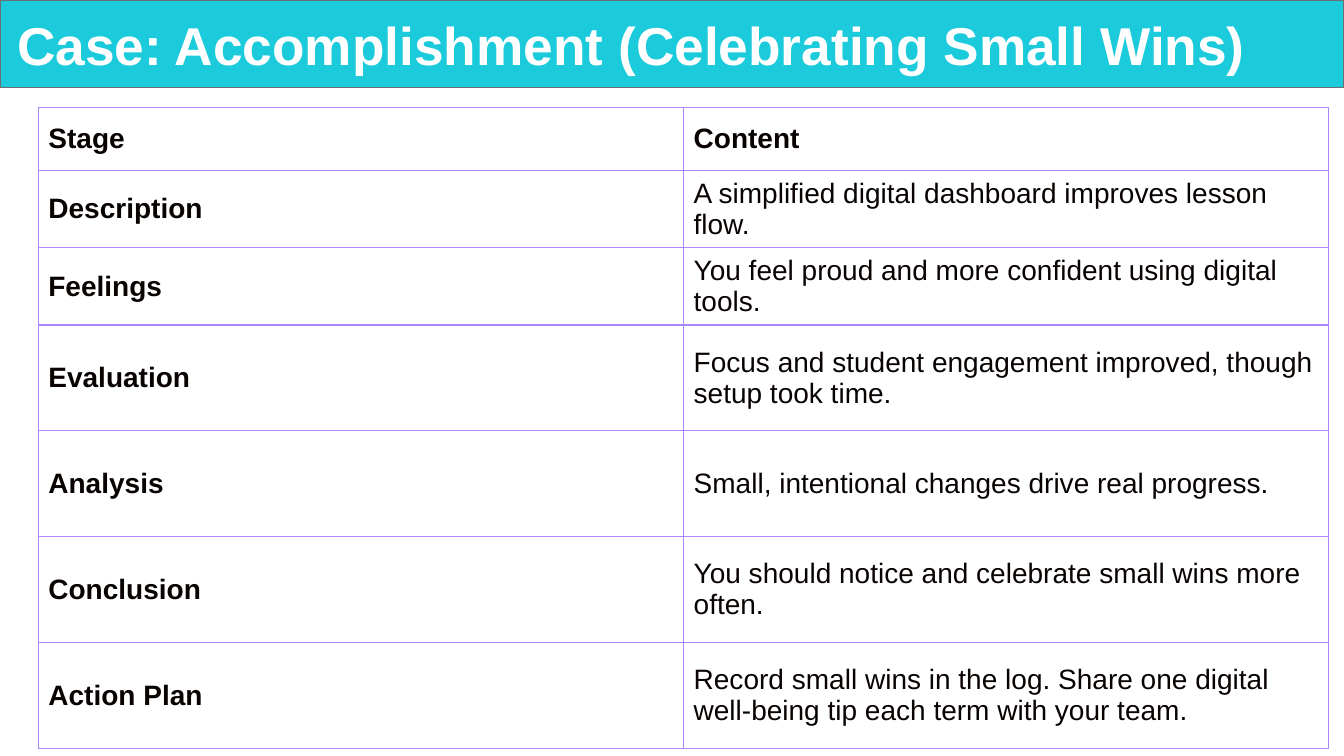
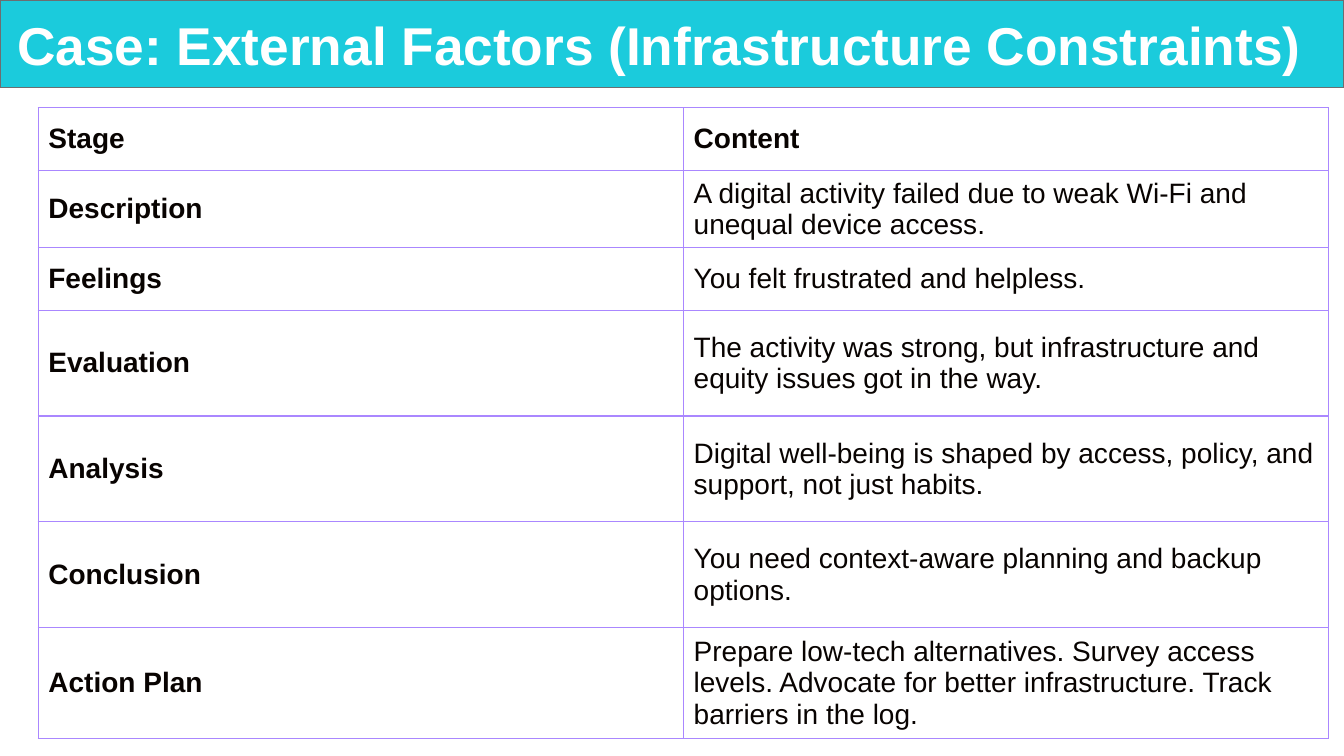
from lxml.etree import SubElement as Sub
from pptx import Presentation
from pptx.dml.color import RGBColor as Rgb
from pptx.enum.shapes import MSO_SHAPE as Shape
from pptx.enum.text import MSO_ANCHOR as Anchor
from pptx.oxml.ns import qn
from pptx.util import Inches, Pt

HUES = {"page": "FFFFFF", "band": "1BCBDC", "edge": "6C6E70",
        "title": "FFFFFF", "text": "080301", "grid": "AA87FF"}
FONT = "Arial"

# Text formats
HEAD = {"name": FONT, "size": Pt(38), "bold": True}
BOLD = {"name": FONT, "size": Pt(20), "bold": True}
BODY = {**BOLD, "bold": False}

# Boxes: left, top, width, height
WIDE, HIGH = 13.33, 7.5
BAND = (0, 0, WIDE, 0.87)
TITLE = (0.11, 0.09, 13.06, 0.78)
GRID = (0.38, 1.07, 12.8, 6.06)
ROWS = [0.62] * 3 + [1.05] * 4

STAGES = ["Description", "Feelings", "Evaluation", "Analysis",
          "Conclusion", "Action Plan"]
CASES = [
    ("Case: Accomplishment (Celebrating Small Wins)", [
        "A simplified digital dashboard improves lesson flow.",
        "You feel proud and more confident using digital tools.",
        "Focus and student engagement improved, though setup took time.",
        "Small, intentional changes drive real progress.",
        "You should notice and celebrate small wins more often.",
        "Record small wins in the log. Share one digital well-being tip "
        "each term with your team.",
    ]),
    ("Case: External Factors (Infrastructure Constraints)", [
        "A digital activity failed due to weak Wi-Fi and unequal device access.",
        "You felt frustrated and helpless.",
        "The activity was strong, but infrastructure and equity issues "
        "got in the way.",
        "Digital well-being is shaped by access, policy, and support, "
        "not just habits.",
        "You need context-aware planning and backup options.",
        "Prepare low-tech alternatives. Survey access levels. Advocate for "
        "better infrastructure. Track barriers in the log.",
    ]),
]


def hue(key):
    return Rgb.from_string(HUES[key])


def paint(fill, key):
    fill.solid()
    fill.fore_color.rgb = hue(key)


def put(frame, text, form, key):
    """Write one run of text with the given format."""
    para = frame.paragraphs[0]
    run = para.add_run()
    run.text = text
    for name, value in form.items():
        setattr(run.font, name, value)
    run.font.color.rgb = hue(key)
    return para


def rule(cell):
    """Draw the four borders of a cell."""
    props = cell._tc.get_or_add_tcPr()
    for side in ("a:lnL", "a:lnR", "a:lnT", "a:lnB"):
        line = Sub(props, qn(side), w=str(Pt(1)))
        Sub(Sub(line, qn("a:solidFill")), qn("a:srgbClr"), val=HUES["grid"])


def add_band(slide, box):
    band = slide.shapes.add_shape(Shape.RECTANGLE, *map(Inches, box))
    band.shadow.inherit = False
    paint(band.fill, "band")
    band.line.color.rgb = hue("edge")
    band.line.width = Pt(1)


def add_title(slide, box, text):
    frame = slide.shapes.add_textbox(*map(Inches, box)).text_frame
    frame.word_wrap = True
    frame.vertical_anchor = Anchor.MIDDLE
    for side in ("left", "right", "top", "bottom"):
        setattr(frame, f"margin_{side}", Inches(0.06))
    put(frame, text, HEAD, "title").line_spacing = 0.9


def add_grid(slide, box, notes):
    data = [("Stage", "Content"), *zip(STAGES, notes)]
    table = slide.shapes.add_table(len(data), 2, *map(Inches, box)).table
    table.first_row = table.horz_banding = False
    for col in table.columns:
        col.width = Inches(box[2] / 2)
    for row, high in zip(table.rows, ROWS):
        row.height = Inches(high)
    for r, pair in enumerate(data):
        for c, text in enumerate(pair):
            cell = table.cell(r, c)
            cell.vertical_anchor = Anchor.MIDDLE
            rule(cell)
            paint(cell.fill, "page")
            put(cell.text_frame, text, BODY if r and c else BOLD, "text")


def add_case(deck, title, notes):
    slide = deck.slides.add_slide(deck.slide_layouts[6])
    paint(slide.background.fill, "page")
    add_band(slide, BAND)
    add_title(slide, TITLE, title)
    add_grid(slide, GRID, notes)


def main():
    deck = Presentation()
    deck.slide_width, deck.slide_height = Inches(WIDE), Inches(HIGH)
    for title, notes in CASES:
        add_case(deck, title, notes)
    deck.save("out.pptx")


if __name__ == "__main__":
    main()
